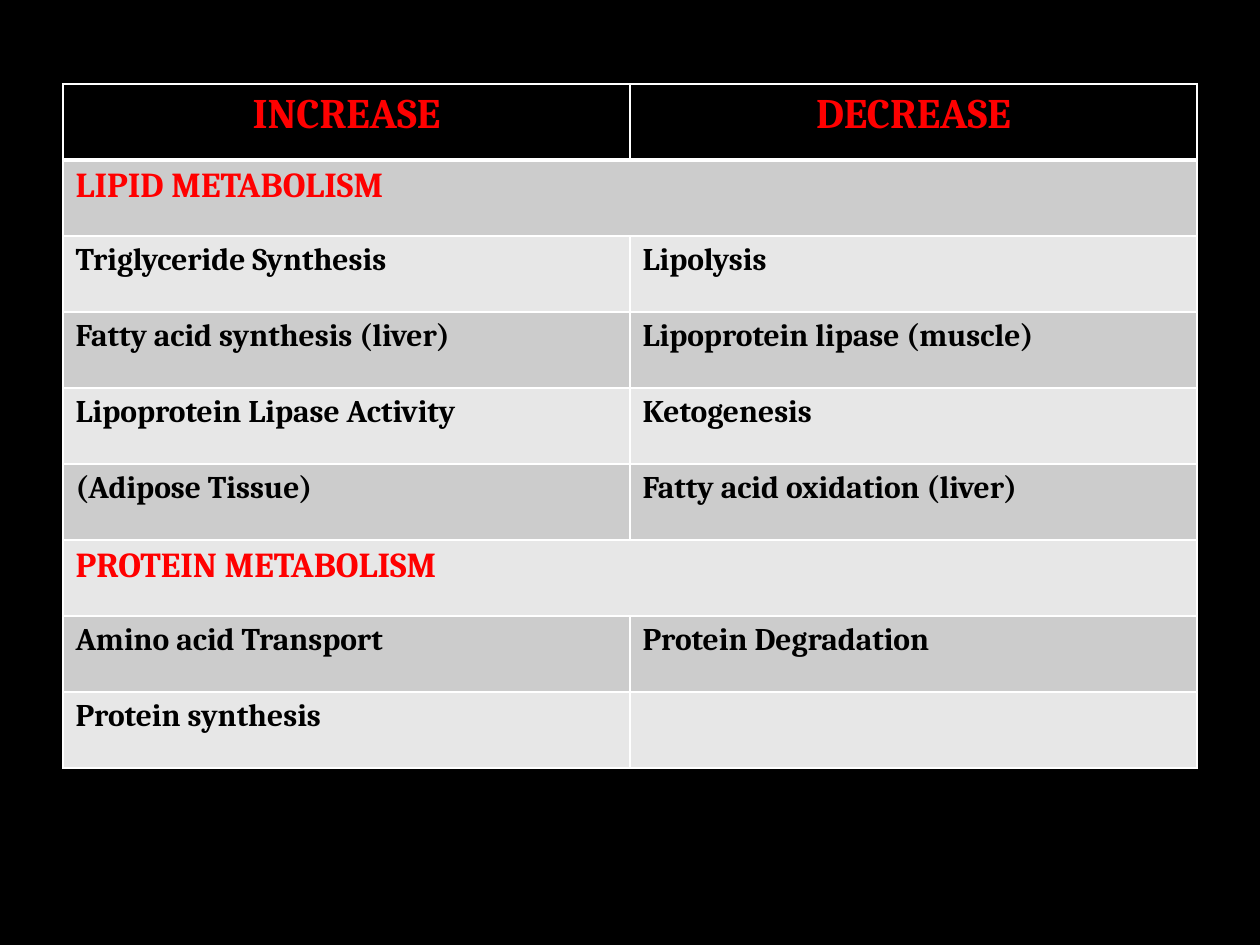
from lxml.etree import SubElement
from pptx import Presentation
from pptx.dml.color import RGBColor
from pptx.enum.text import PP_ALIGN
from pptx.oxml.ns import qn
from pptx.util import Pt

PX = 914400 // 126
BLACK = RGBColor(0, 0, 0)
WHITE = RGBColor(255, 255, 255)
RED = RGBColor(255, 0, 0)
DARK_BAND = RGBColor(0xCC, 0xCC, 0xCC)
LIGHT_BAND = RGBColor(0xE7, 0xE7, 0xE7)

ROWS = [
    ("INCREASE", "DECREASE"),
    ("LIPID METABOLISM",),
    ("Triglyceride Synthesis", "Lipolysis"),
    ("Fatty acid synthesis (liver)", "Lipoprotein lipase (muscle)"),
    ("Lipoprotein Lipase Activity", "Ketogenesis"),
    ("(Adipose Tissue)", "Fatty acid oxidation (liver)"),
    ("PROTEIN METABOLISM",),
    ("Amino acid Transport", "Protein Degradation"),
    ("Protein synthesis", ""),
]
LEFT, TOP, COLUMN_WIDTH, ROW_HEIGHT = 63, 84, 567, 76


def set_borders(cell, widths):
    """Draw white borders, with widths in points for each side L, R, T, B."""
    properties = cell._tc.get_or_add_tcPr()
    for position, (side, width) in enumerate(widths.items()):
        line = SubElement(properties, qn(f"a:ln{side}"), w=str(Pt(width)))
        fill = SubElement(line, qn("a:solidFill"))
        SubElement(fill, qn("a:srgbClr"), val=str(WHITE))
        properties.insert(position, line)


deck = Presentation()
deck.slide_width, deck.slide_height = 1260 * PX, 945 * PX
page = deck.slides.add_slide(deck.slide_layouts[6])
page.background.fill.solid()
page.background.fill.fore_color.rgb = BLACK

table = page.shapes.add_table(
    len(ROWS), 2, LEFT * PX, TOP * PX,
    2 * COLUMN_WIDTH * PX, len(ROWS) * ROW_HEIGHT * PX).table

for row, texts in enumerate(ROWS):
    is_header = row == 0
    is_section = len(texts) == 1
    if is_header:
        fill_color, size = BLACK, 24
    else:
        fill_color = DARK_BAND if row % 2 else LIGHT_BAND
        size = 20 if is_section else 18
    if is_section:
        table.cell(row, 0).merge(table.cell(row, 1))

    for column in range(2):
        cell = table.cell(row, column)
        cell.fill.solid()
        cell.fill.fore_color.rgb = fill_color
        set_borders(cell, {"L": 1, "R": 1, "T": 3 if row == 1 else 1,
                           "B": 3 if is_header else 1})

    for column, text in enumerate(texts):
        para = table.cell(row, column).text_frame.paragraphs[0]
        para.text = text
        if is_header:
            para.alignment = PP_ALIGN.CENTER
        for span in para.runs:
            span.font.name = "Cambria"
            span.font.size = Pt(size)
            span.font.bold = True
            span.font.color.rgb = RED if is_header or is_section else BLACK

deck.save("out.pptx")
